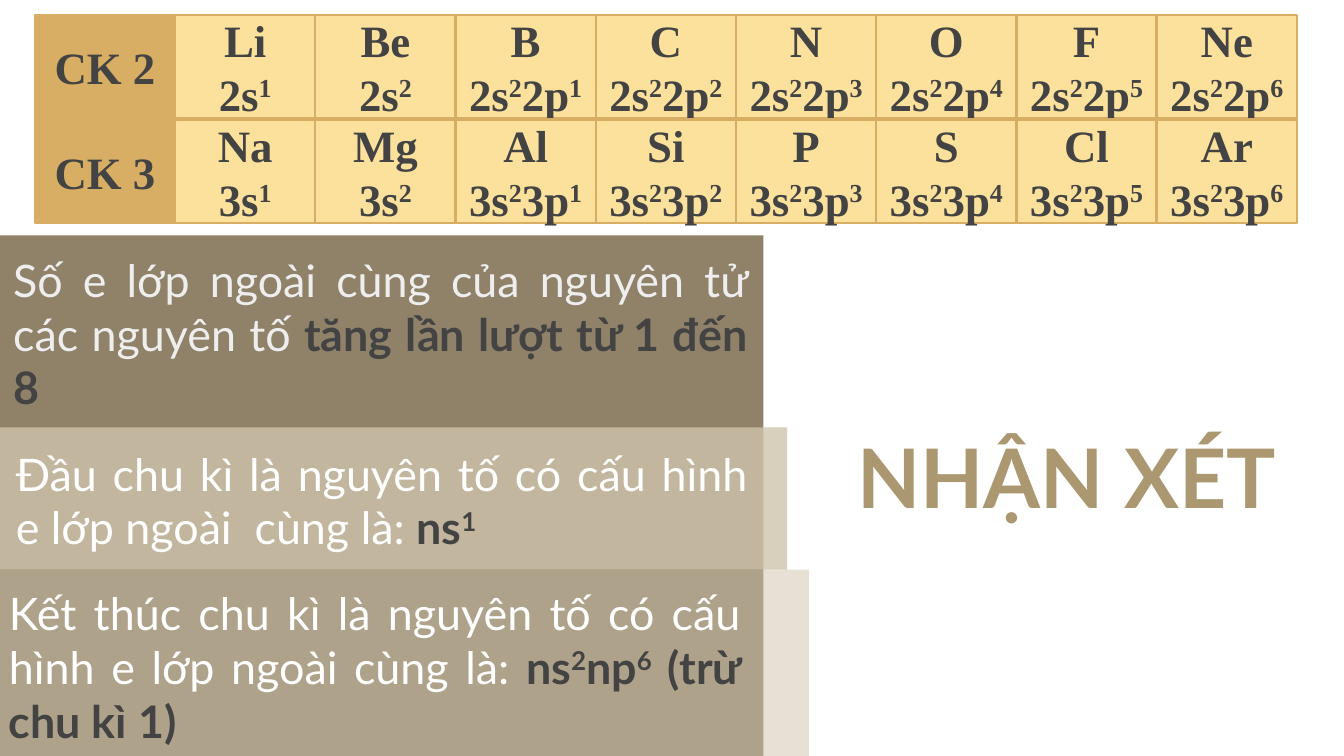
from dataclasses import dataclass

from lxml.etree import SubElement
from pptx import Presentation
from pptx.dml.color import RGBColor as RGB
from pptx.enum.shapes import MSO_SHAPE as Kind
from pptx.enum.text import MSO_ANCHOR as Anchor, MSO_AUTO_SIZE as Fit, PP_ALIGN as Align
from pptx.oxml.ns import qn
from pptx.util import Cm, Pt


@dataclass
class Theme:
    ink: str = "434343"
    gold: str = "D8AE65"
    cream: str = "FCE19C"
    brown: str = "908269"
    sand: str = "CFC3AC"
    tan: str = "AC9870"
    white: str = "FFFFFF"
    pale: str = "EEEEEE"
    serif: str = "Times New Roman"
    sans: str = "Lato"
    size: int = 24
    big: int = 44


theme = Theme()


def write(shape, *lines, font=theme.sans, size=theme.size, color=theme.ink,
          bold=False, align=Align.JUSTIFY, anchor=Anchor.MIDDLE, wrap=True):
    """Fill a shape with lines, where *...* is bold ink and ^...^ is superscript."""
    frame = shape.text_frame
    frame.auto_size = Fit.NONE
    frame.word_wrap = wrap
    frame.vertical_anchor = anchor
    for row, line in enumerate(lines):
        para = frame.add_paragraph() if row else frame.paragraphs[0]
        para.alignment = align
        for i, part in enumerate(line.split("*")):
            strong = i % 2 == 1
            for j, piece in enumerate(part.split("^")):
                if not piece:
                    continue
                run = para.add_run()
                run.text = piece
                run.font.name = font
                run.font.size = Pt(size)
                run.font.bold = bold or strong
                run.font.color.rgb = RGB.from_string(theme.ink if strong else color)
                if j % 2:
                    run._r.get_or_add_rPr().set("baseline", "30000")


def box(shapes, place, fill, line=None, alpha=100):
    shape = shapes.add_shape(Kind.RECTANGLE, *map(Cm, place))
    shape.shadow.inherit = False
    shape.fill.solid()
    shape.fill.fore_color.rgb = RGB.from_string(fill)
    if alpha < 100:
        tint = shape._element.spPr.find(qn("a:solidFill"))[0]
        SubElement(tint, qn("a:alpha")).set("val", str(alpha * 1000))
    if line:
        shape.line.color.rgb = RGB.from_string(line)
        shape.line.width = Pt(1.25)
    else:
        shape.line.fill.background()
    return shape


deck = Presentation()
deck.slide_width, deck.slide_height = Cm(25.4), Cm(14.29)
slide = deck.slides.add_slide(deck.slide_layouts[5])

# Title
title = slide.shapes.title
title.left, title.top, title.width, title.height = map(Cm, (15.95, 7.65, 9.73, 2.69))
write(title, "NHẬN XÉT", size=theme.big, color=theme.tan, bold=True)

# Periods: a heading cell, then each element with its outer electrons
periods = {2: "Li Be B C N O F Ne", 3: "Na Mg Al Si P S Cl Ar"}
left, top, wide, high, step = 0.66, 0.28, 2.65, 1.96, 1.98
for row, (n, names) in enumerate(periods.items()):
    group = slide.shapes.add_group_shape()
    for col, name in enumerate([f"CK {n}"] + names.split()):
        lines = [name]
        if col:
            outer = f"{n}s^{min(col, 2)}^"
            if col > 2:
                outer += f"{n}p^{col - 2}^"
            lines.append(outer)
        place = (left + col * wide, top + row * step, wide, high)
        cell = box(group.shapes, place, theme.cream if col else theme.gold, theme.gold)
        write(cell, *lines, font=theme.serif, bold=True, align=Align.CENTER, wrap=False)

# Remarks: band, opacity, text place, anchor, colour, text
remarks = [
    ((0, 4.45, 14.43, 9.98), theme.brown, 100,
     (0, 4.7, 14.38, 3.2), Anchor.MIDDLE, theme.pale,
     "Số e lớp ngoài cùng của nguyên tử các nguyên tố *tăng lần lượt từ 1 đến 8*"),
    ((0, 8.08, 14.88, 2.69), theme.sand, 80,
     (0.05, 8.31, 14.33, 2.31), Anchor.TOP, theme.white,
     "Đầu chu kì là nguyên tố có cấu hình e lớp ngoài  cùng là: *ns^1^*"),
    ((-0.1, 10.77, 15.39, 3.66), theme.sand, 50,
     (-0.08, 10.95, 14.33, 3.33), Anchor.TOP, theme.white,
     "Kết thúc chu kì là nguyên tố có cấu hình e lớp ngoài cùng là: "
     "*ns^2^np^6^ (trừ chu kì 1)*"),
]
for band, fill, alpha, place, anchor, color, text in remarks:
    box(slide.shapes, band, fill, alpha=alpha)
    note = slide.shapes.add_textbox(*map(Cm, place))
    write(note, text, color=color, anchor=anchor)

deck.save("out.pptx")
